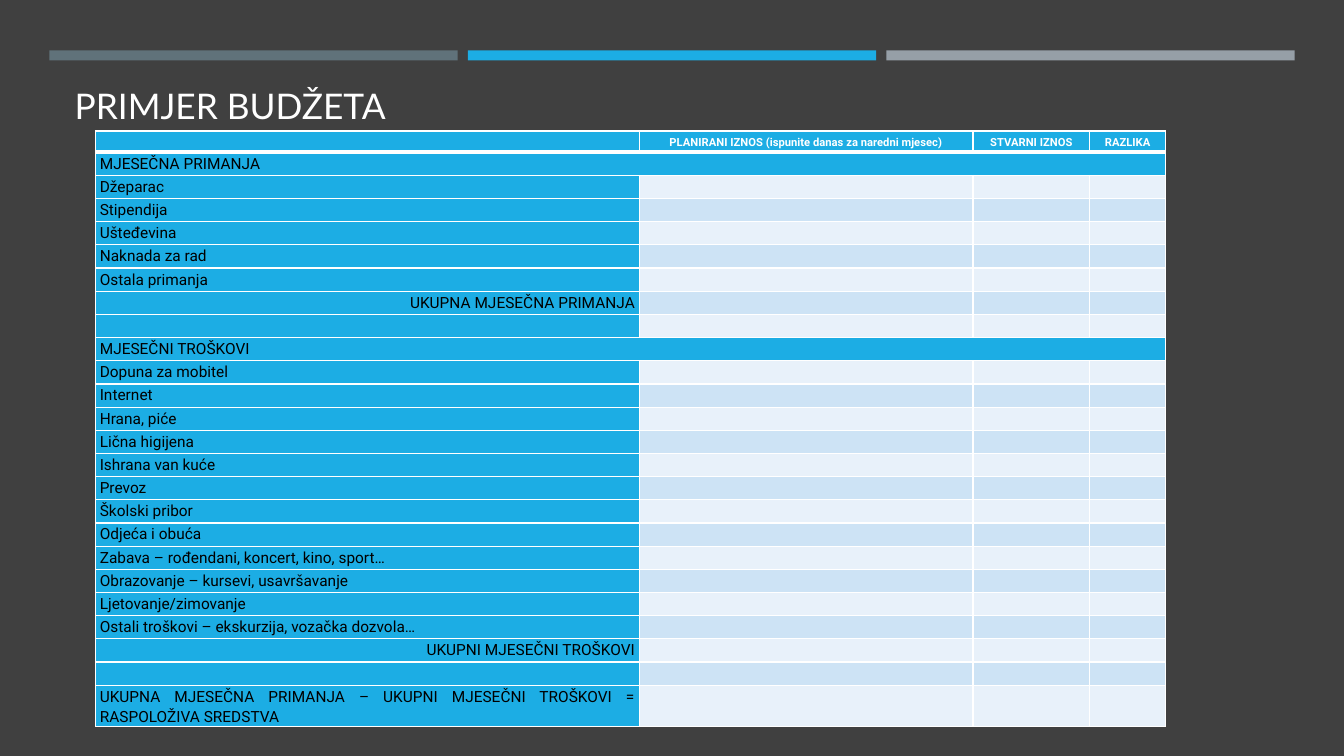
from lxml import etree
from pptx import Presentation
from pptx import util as u
from pptx.dml.color import RGBColor
from pptx.enum import shapes, text
from pptx.oxml.ns import qn

PX = 9144  # 100 px to the inch

THEME = {
    "back": "404040", "white": "FFFFFF", "black": "000000",
    "slate": "60727A", "blue": "1CADE4", "grey": "969FA7",
    "pale": "E8F1FA", "tint": "CDE3F5",
    "head": "Lato", "body": "Roboto",
    "title": 25.2, "label": 8, "item": 11,
    "thin": 1, "thick": 3,
}

LEFT, RIGHT = text.PP_ALIGN.LEFT, text.PP_ALIGN.RIGHT
MID, JUST = text.PP_ALIGN.CENTER, text.PP_ALIGN.JUSTIFY

HEADS = ["", "PLANIRANI IZNOS (ispunite danas za naredni mjesec)",
         "STVARNI IZNOS", "RAZLIKA"]
INCOME = ["Džeparac", "Stipendija", "Ušteđevina", "Naknada za rad",
          "Ostala primanja"]
COSTS = ["Dopuna za mobitel", "Internet", "Hrana, piće", "Lična higijena",
         "Ishrana van kuće", "Prevoz", "Školski pribor", "Odjeća i obuća",
         "Zabava – rođendani, koncert, kino, sport…",
         "Obrazovanje – kursevi, usavršavanje", "Ljetovanje/zimovanje",
         "Ostali troškovi – ekskurzija, vozačka dozvola…"]
SUMS = ["UKUPNA MJESEČNA PRIMANJA", "UKUPNI MJESEČNI TROŠKOVI"]
PARTS = ["MJESEČNA PRIMANJA", "MJESEČNI TROŠKOVI"]
REST = ("UKUPNA MJESEČNA PRIMANJA – UKUPNI MJESEČNI TROŠKOVI = "
        "RASPOLOŽIVA SREDSTVA")
ROWS = [PARTS[0], *INCOME, SUMS[0], "", PARTS[1], *COSTS, SUMS[1], "", REST]
ALIGN = {SUMS[0]: RIGHT, SUMS[1]: RIGHT, REST: JUST}

COLS = [539, 331, 116, 75]
HEAD_H, ROW_H, REST_H = 21, 23, 41


def put(obj, **vals):
    for name, val in vals.items():
        setattr(obj, name, val)


def paint(fill, color):
    fill.solid()
    fill.fore_color.rgb = RGBColor.from_string(THEME[color])


def style(font, face, size, color, bold=False):
    put(font, name=THEME[face], size=u.Pt(THEME[size]), bold=bold)
    font.color.rgb = RGBColor.from_string(THEME[color])


def add_title(slide, words, x, y, w, h):
    box = slide.shapes.title
    put(box, left=x * PX, top=y * PX, width=w * PX, height=h * PX)
    frame = box.text_frame
    put(frame, text=words, word_wrap=True, auto_size=text.MSO_AUTO_SIZE.NONE,
        vertical_anchor=text.MSO_ANCHOR.BOTTOM)
    par = frame.paragraphs[0]
    par.alignment = LEFT
    style(par.runs[0].font, "head", "title", "white")


def add_bar(slide, x, y, w, h, color):
    bar = slide.shapes.add_shape(shapes.MSO_SHAPE.RECTANGLE,
                                 x * PX, y * PX, w * PX, h * PX)
    bar.shadow.inherit = False
    bar.line.fill.background()
    paint(bar.fill, color)


def edge(cell, **widths):
    """Draw white cell borders; widths are keyed by side: L, R, T, B."""
    props = cell._tc.get_or_add_tcPr()
    for spot, (side, size) in enumerate(widths.items()):
        line = etree.Element(qn(f"a:ln{side}"), w=str(u.Pt(THEME[size])))
        fill = etree.SubElement(line, qn("a:solidFill"))
        etree.SubElement(fill, qn("a:srgbClr"), val=THEME["white"])
        props.insert(spot, line)


def fill_cell(cell, words, color, align, font, row):
    put(cell, margin_left=4 * PX, margin_right=4 * PX,
        margin_top=0, margin_bottom=0)
    paint(cell.fill, color)
    edge(cell, L="thin", R="thin", T="thick" if row == 1 else "thin",
         B="thick" if row == 0 else "thin")
    par = cell.text_frame.paragraphs[0]
    put(par, alignment=align, line_spacing=1.15, space_after=u.Pt(10))
    if words:
        run = par.add_run()
        run.text = words
        style(run.font, **font)
    else:
        # An empty cell needs a small type size to keep its row low
        etree.SubElement(par._p, qn("a:endParaRPr"),
                         sz=str(THEME[font["size"]] * 100))


def add_budget(slide, x, y):
    count = len(ROWS) + 1
    tall = [HEAD_H] + [ROW_H] * (count - 2) + [REST_H]
    table = slide.shapes.add_table(count, len(COLS), x * PX, y * PX,
                                   sum(COLS) * PX, sum(tall) * PX).table
    for col, wide in zip(table.columns, COLS):
        col.width = wide * PX
    for row, high in zip(table.rows, tall):
        row.height = high * PX

    # Header row
    label = {"face": "body", "size": "label", "color": "white", "bold": True}
    for col, words in enumerate(HEADS):
        cell = table.cell(0, col)
        fill_cell(cell, words, "blue", MID, label, 0)
        cell.vertical_anchor = text.MSO_ANCHOR.MIDDLE

    # Item rows: blue names, banded amounts, section rows merged
    item = {"face": "body", "size": "item", "color": "black"}
    for row, words in enumerate(ROWS, 1):
        part = words in PARTS
        band = "blue" if part else ("tint" if row % 2 else "pale")
        for col in range(len(COLS)):
            first = col == 0
            fill_cell(table.cell(row, col), words if first else "",
                      "blue" if first else band,
                      ALIGN.get(words, LEFT), item, row)
        if part:
            table.cell(row, 0).merge(table.cell(row, len(COLS) - 1))


def main():
    deck = Presentation()
    put(deck, slide_width=1333 * PX, slide_height=750 * PX)
    slide = deck.slides.add_slide(deck.slide_layouts[5])
    paint(slide.background.fill, "back")

    # Title and the three bars above it
    add_title(slide, "PRIMJER BUDŽETA", 64, 77, 1206, 54)
    for spot, color in enumerate(["slate", "blue", "grey"]):
        add_bar(slide, 49 + 415 * spot, 50, 405, 10, color)

    # Budget table
    add_budget(slide, 95, 130)
    deck.save("out.pptx")


if __name__ == "__main__":
    main()
